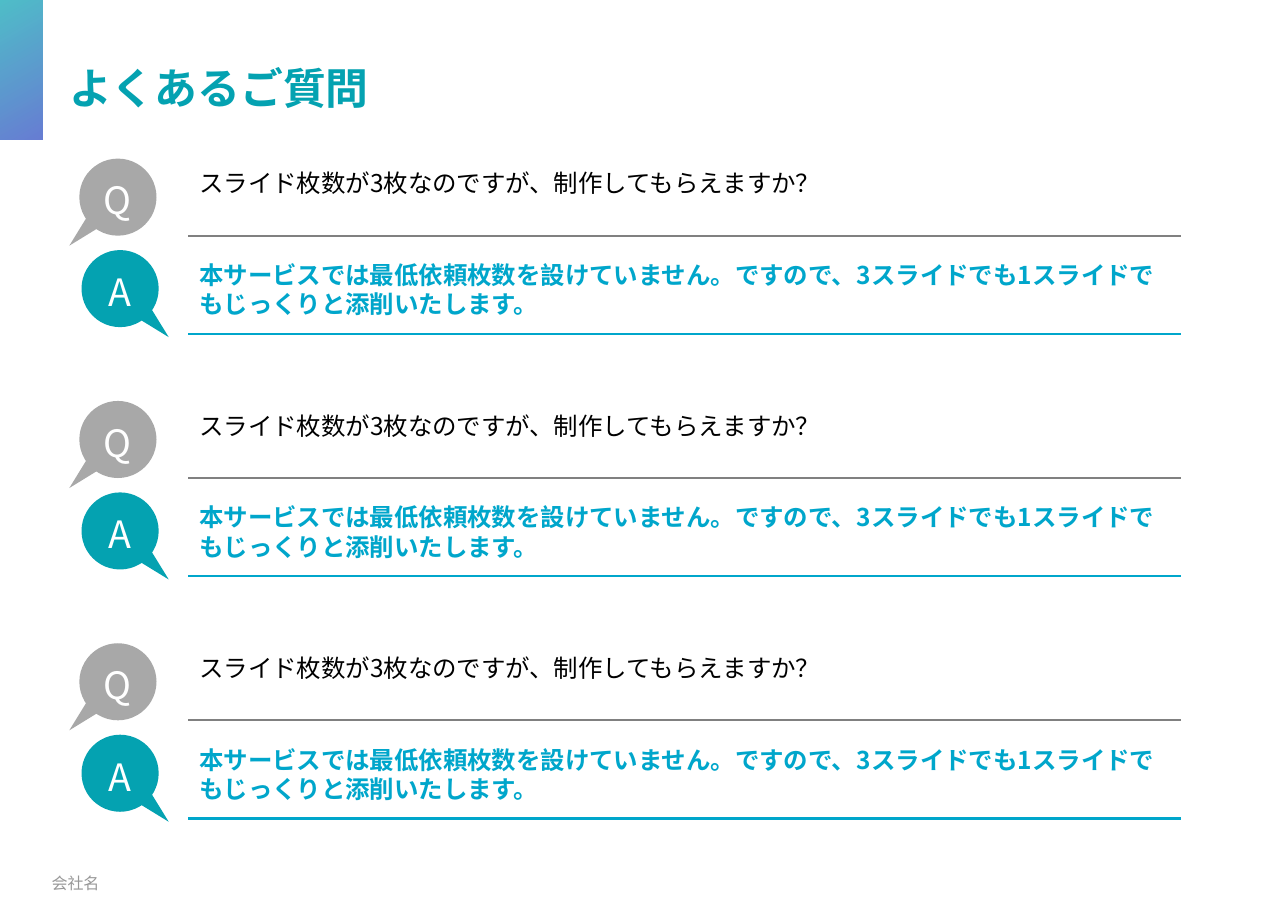
from lxml import etree
from pptx import Presentation
from pptx import util as u
from pptx.dml.color import RGBColor
from pptx.enum import shapes, text
from pptx.oxml import ns

TEAL = RGBColor(0x04, 0xA2, 0xB1)
INDIGO = RGBColor(0x27, 0x46, 0xC0)
CYAN = RGBColor(0x00, 0xA6, 0xCB)
GRAY = RGBColor(0xA8, 0xA8, 0xA8)
RULE_GRAY = RGBColor(0x80, 0x80, 0x80)
FOOTER_GRAY = RGBColor(0x98, 0x98, 0x98)
BLACK = RGBColor(0, 0, 0)
WHITE = RGBColor(0xFF, 0xFF, 0xFF)

FONT = "Noto Sans CJK JP"
W, H = u.Inches(11.69), u.Inches(8.27)
COL, ROW = W / 100, H / 100

QUESTION = "スライド枚数が3枚なのですが、制作してもらえますか？"
ANSWER = ("本サービスでは最低依頼枚数を設けていません。ですので、"
          "3スライドでも1スライドでもじっくりと添削いたします。")
FAQS = [(QUESTION, ANSWER)] * 3
FAQ_PITCH = 26.6


def emu(x, y, w, h):
    return int(x * COL), int(y * ROW), int(w * COL), int(h * ROW)


def write(sp, words, size, color, bold=False, font=FONT,
          anchor=text.MSO_ANCHOR.MIDDLE, top=0.05, bottom=0.05):
    tf = sp.text_frame
    tf.word_wrap = True
    tf.vertical_anchor = anchor
    tf.margin_left = tf.margin_right = u.Inches(0.1)
    tf.margin_top, tf.margin_bottom = u.Inches(top), u.Inches(bottom)
    tf.text = words
    p = tf.paragraphs[0]
    f = p.runs[0].font
    f.size, f.bold, f.name = u.Pt(size), bold, font
    f.color.rgb = color
    ea = etree.SubElement(p.runs[0]._r.get_or_add_rPr(), ns.qn("a:ea"))
    ea.set("typeface", FONT)
    return p


def add_accent(s, box):
    sp = s.shapes.add_shape(shapes.MSO_SHAPE.RECTANGLE, *emu(*box))
    sp.shadow.inherit = False
    sp.line.fill.background()
    sp.fill.gradient()
    sp.fill.gradient_angle = 300
    for stop, color in zip(sp.fill.gradient_stops, (TEAL, INDIGO)):
        stop.color.rgb = color
    for clr in sp._element.spPr.iter(ns.qn("a:srgbClr")):
        etree.SubElement(clr, ns.qn("a:alpha")).set("val", "70000")


def add_title(s, box):
    p = write(s.shapes.add_textbox(*emu(*box)), "よくあるご質問", 28, TEAL, bold=True)
    p.line_spacing = 1.1


def add_footer(s, box):
    write(s.shapes.add_textbox(*emu(*box)), "会社名", 10.5, FOOTER_GRAY, font="Calibri")


def add_bubble(s, box, letter, color, tail):
    sp = s.shapes.add_shape(shapes.MSO_SHAPE.OVAL_CALLOUT, *emu(*box))
    sp.adjustments[0], sp.adjustments[1] = tail, 0.63
    sp.shadow.inherit = False
    sp.fill.solid()
    sp.fill.fore_color.rgb = color
    sp.line.fill.background()
    p = write(sp, letter, 24.6, WHITE, bottom=0)
    p.alignment = text.PP_ALIGN.CENTER


def add_rule(s, x1, x2, y, color):
    ln = s.shapes.add_connector(shapes.MSO_CONNECTOR.STRAIGHT, int(x1 * COL),
                                int(y * ROW), int(x2 * COL), int(y * ROW))
    ln.line.color.rgb = color
    ln.line.width = u.Pt(1.5)
    etree.SubElement(ln._element.spPr, ns.qn("a:effectLst"))


def add_entry(s, box, words, letter, bubble_color, tail, shift, color, rule_color, bold):
    x, y, w, h = box
    add_bubble(s, (x + shift, y, 5.99, 8.46), letter, bubble_color, tail)
    tb = s.shapes.add_textbox(*emu(x + 8.47, y + 0.24, w - 8.47, 8.34))
    p = write(tb, words, 16, color, bold, anchor=text.MSO_ANCHOR.TOP, top=0.07)
    p.space_after = u.Pt(5.3)
    add_rule(s, x + 8.47, x + w, y + h, rule_color)


def add_faq(s, box, question, answer):
    x, y, w, h = box
    add_entry(s, (x, y, w, 8.46), question, "Q", GRAY, -0.63, 0,
              BLACK, RULE_GRAY, False)
    add_entry(s, (x, y + 10.04, w, h - 10.04), answer, "A", TEAL, 0.63, 0.17,
              CYAN, CYAN, True)


def main():
    prs = Presentation()
    prs.slide_width, prs.slide_height = W, H
    s = prs.slides.add_slide(prs.slide_layouts[6])
    add_accent(s, (0, 0, 3.34, 15.36))
    add_title(s, (4.53, 5.68, 95.47, 7.26))
    add_footer(s, (3.17, 94.32, 29.51, 5.32))
    for i, (question, answer) in enumerate(FAQS):
        add_faq(s, (6.16, 17.41 + i * FAQ_PITCH, 85.54, 19.23), question, answer)
    prs.save("out.pptx")


if __name__ == "__main__":
    main()
